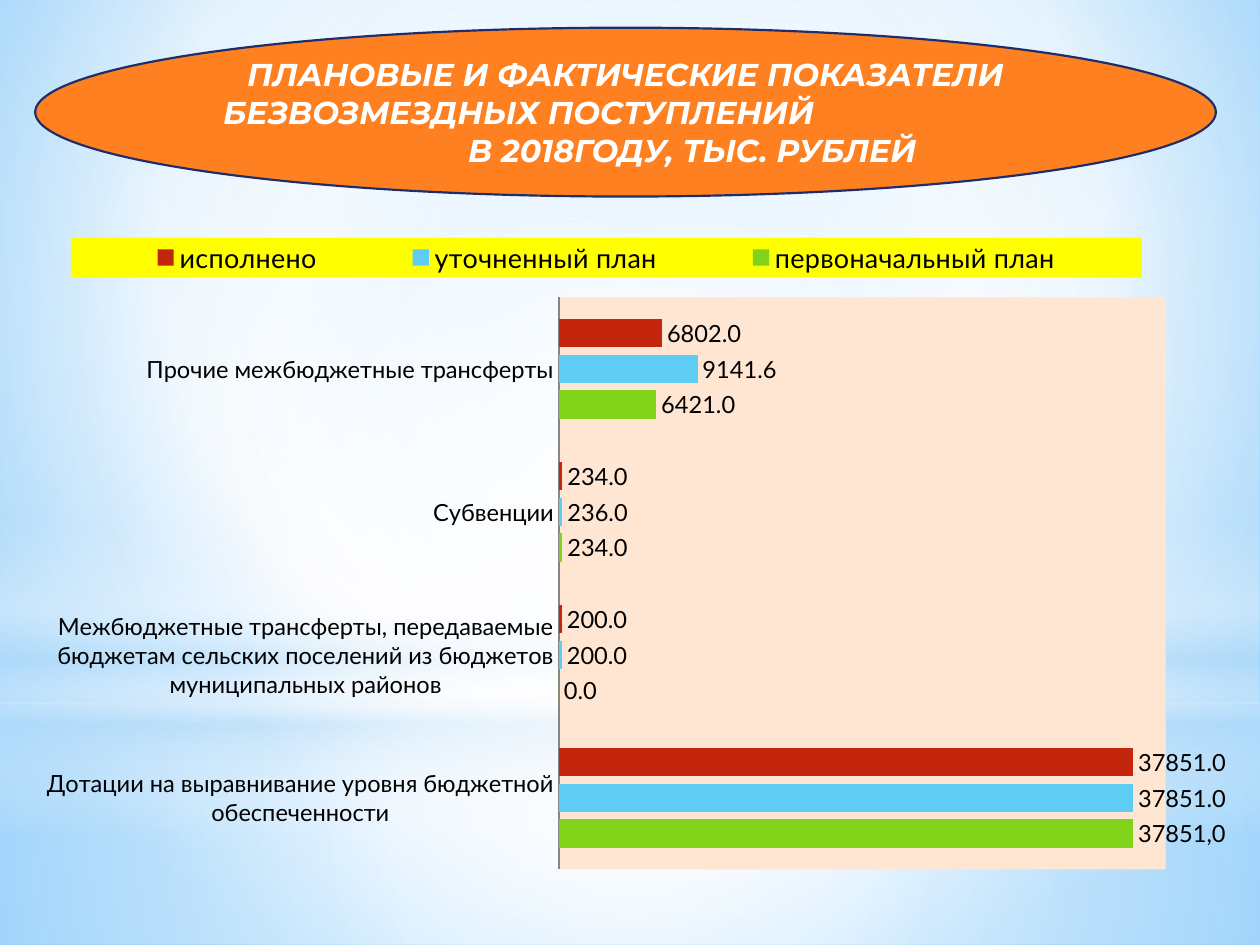
from pptx import Presentation
from pptx.chart.data import CategoryChartData
from pptx.dml.color import RGBColor
from pptx.enum.chart import XL_CHART_TYPE, XL_LABEL_POSITION, XL_LEGEND_POSITION, XL_TICK_LABEL_POSITION, XL_TICK_MARK
from pptx.enum.shapes import MSO_SHAPE
from pptx.enum.text import MSO_ANCHOR, PP_ALIGN
from pptx.oxml import parse_xml
from pptx.oxml.ns import nsdecls, qn
from pptx.util import Inches, Pt

RECTANGLE, OVAL = MSO_SHAPE.RECTANGLE, MSO_SHAPE.OVAL
LEFT, CENTER = PP_ALIGN.LEFT, PP_ALIGN.CENTER
MIDDLE_ANCHOR = MSO_ANCHOR.MIDDLE
BAR_CLUSTERED = XL_CHART_TYPE.BAR_CLUSTERED
LEGEND_TOP = XL_LEGEND_POSITION.TOP
NEXT_TO_AXIS = XL_TICK_LABEL_POSITION.NEXT_TO_AXIS
NO_TICK = XL_TICK_MARK.NONE
OUTSIDE_END = XL_LABEL_POSITION.OUTSIDE_END

WHITE = RGBColor(0xFF, 0xFF, 0xFF)
BLACK = RGBColor(0, 0, 0)
GRAY = RGBColor(0x86, 0x86, 0x86)
ORANGE = RGBColor(0xFF, 0x80, 0x21)
NAVY = RGBColor(0x1F, 0x2E, 0x69)
YELLOW = RGBColor(0xFF, 0xFF, 0x00)
PEACH = RGBColor(0xFF, 0xE6, 0xD3)
GREEN = RGBColor(0x81, 0xD3, 0x1A)
BLUE = RGBColor(0x5E, 0xCC, 0xF3)
RED = RGBColor(0xC3, 0x26, 0x0C)
SKY = RGBColor(0x9E, 0xD5, 0xFF)
DEEP_SKY = RGBColor(0x5B, 0xB9, 0xFF)
PALE_BLUE = RGBColor(0xB4, 0xDC, 0xFA)

CHART_FONT, TITLE_FONT = "Lato", "Montserrat"
LABEL_SIZE, LEGEND_SIZE, TITLE_SIZE = 13.5, 15.4, 18

TITLE_LINES = [
    ("ПЛАНОВЫЕ И ФАКТИЧЕСКИЕ ПОКАЗАТЕЛИ", CENTER, 0),
    ("БЕЗВОЗМЕЗДНЫХ ПОСТУПЛЕНИЙ", LEFT, 0.02),
    ("В 2018ГОДУ, ТЫС. РУБЛЕЙ", CENTER, 1.06),
]
CATEGORIES = [
    "Дотации на выравнивание уровня бюджетной обеспеченности",
    "Межбюджетные трансферты, передаваемые бюджетам сельских поселений из бюджетов муниципальных районов",
    "Субвенции",
    "Прочие межбюджетные трансферты",
]
SERIES = [
    ("первоначальный план", GREEN, (37851, 0, 234, 6421)),
    ("уточненный план", BLUE, (37851, 200, 236, 9141.6)),
    ("исполнено", RED, (37851, 200, 234, 6802)),
]
BACKGROUND_STOPS = [(0, SKY, 100), (60, WHITE, 100), (100, DEEP_SKY, 100)]
MIDDLE = (50, 50, 50, 50)
GLOWS = [
    (RECTANGLE, (0, 5.58, 10, 1.92), [(0, WHITE, 91), (37, WHITE, 76), (100, PALE_BLUE, 79)], MIDDLE),
    (RECTANGLE, (0, 0, 10, 5.58), [(0, WHITE, 89), (48, WHITE, 62), (100, PALE_BLUE, 79)], MIDDLE),
    (RECTANGLE, (0, 4.12, 10, 2.5), [(0, WHITE, 0), (29, WHITE, 30), (45, PALE_BLUE, 40),
                                     (55, WHITE, 26), (65, PALE_BLUE, 60), (100, WHITE, 0)], None),
    (OVAL, (0, 1.75, 10, 5.58), [(0, WHITE, 100), (56, WHITE, 0)], MIDDLE),
]


def gradient(stops, focus):
    stop_xml = "".join(
        f'<a:gs pos="{position * 1000}"><a:srgbClr val="{color}">'
        f'<a:alpha val="{alpha * 1000}"/></a:srgbClr></a:gs>'
        for position, color, alpha in stops)
    if focus:
        edges = " ".join(f'{side}="{value * 1000}"' for side, value in zip("ltrb", focus))
        direction = f'<a:path path="circle"><a:fillToRect {edges}/></a:path>'
    else:
        direction = '<a:lin ang="5400000" scaled="0"/>'
    return parse_xml(f'<a:gradFill {nsdecls("a")} rotWithShape="1"><a:gsLst>{stop_xml}</a:gsLst>{direction}</a:gradFill>')


def replace_solid_fill(properties, fill):
    properties.replace(properties.find(qn("a:solidFill")), fill)


def add_shape(slide, kind, box):
    shape = slide.shapes.add_shape(kind, *map(Inches, box))
    shape.shadow.inherit = False
    shape.fill.solid()
    return shape


def chart_layout(inner, *box):
    target = '<c:layoutTarget val="inner"/>' if inner else ""
    modes = "".join(f'<c:{side}Mode val="edge"/>' for side in "xy")
    sizes = "".join(f'<c:{side} val="{value}"/>' for side, value in zip("xywh", box))
    return parse_xml(f'<c:layout {nsdecls("c")}><c:manualLayout>{target}{modes}{sizes}</c:manualLayout></c:layout>')


def chart_fill(color):
    return parse_xml(f'<c:spPr {nsdecls("c", "a")}><a:solidFill><a:srgbClr val="{color}"/></a:solidFill></c:spPr>')


def chart_part(chart, tag):
    part = chart.element.find(".//" + qn(tag))
    for layout in part.findall(qn("c:layout")):
        part.remove(layout)
    return part


def set_font(font, size, color, name):
    font.size, font.name = Pt(size), name
    font.color.rgb = color


def add_background(slide):
    slide.background.fill.solid()
    properties = slide.element.find(".//" + qn("p:bgPr"))
    replace_solid_fill(properties, gradient(BACKGROUND_STOPS, (20, 10, 20, 60)))
    for kind, box, stops, focus in GLOWS:
        shape = add_shape(slide, kind, box)
        shape.line.fill.background()
        replace_solid_fill(shape.element.spPr, gradient(stops, focus))


def add_chart(slide):
    data = CategoryChartData(number_format="0.0")
    data.categories = CATEGORIES
    for name, _, values in SERIES:
        data.add_series(name, values)
    box = map(Inches, (0.28, 1.78, 9.45, 5.28))
    chart = slide.shapes.add_chart(BAR_CLUSTERED, *box, data).chart
    chart.has_title = False
    set_font(chart.font, LABEL_SIZE, BLACK, CHART_FONT)

    category_axis, value_axis = chart.category_axis, chart.value_axis
    category_axis.major_tick_mark = NO_TICK
    category_axis.tick_label_position = NEXT_TO_AXIS
    category_axis.format.line.color.rgb = GRAY
    value_axis.has_major_gridlines = False
    value_axis.minimum_scale, value_axis.maximum_scale = 0, 40000
    value_axis.visible = False

    plot = chart.plots[0]
    plot.gap_width, plot.overlap = 150, -25
    plot.vary_by_categories = False
    for series, (_, color, _) in zip(plot.series, SERIES):
        series.format.fill.solid()
        series.format.fill.fore_color.rgb = color
        labels = series.data_labels
        labels.show_value = True
        labels.number_format, labels.number_format_is_linked = "0.0", False
        labels.position = OUTSIDE_END
    label = plot.series[0].points[0].data_label
    label.text_frame.text = "37851,0"
    set_font(label.text_frame.paragraphs[0].runs[0].font, LABEL_SIZE, BLACK, CHART_FONT)
    label.position = OUTSIDE_END

    chart.has_legend = True
    legend = chart.legend
    legend.position = LEGEND_TOP
    legend.include_in_layout = False
    set_font(legend.font, LEGEND_SIZE, BLACK, CHART_FONT)
    legend_part = chart_part(chart, "c:legend")
    legend_part.find(qn("c:legendPos")).addnext(chart_layout(False, 0.03, 0.02, 0.9, 0.06))
    legend_part.find(qn("c:overlay")).addnext(chart_fill(YELLOW))

    plot_area = chart_part(chart, "c:plotArea")
    plot_area.insert(0, chart_layout(True, 0.44, 0.11, 0.51, 0.86))
    plot_area.append(chart_fill(PEACH))


def add_title(slide):
    shape = add_shape(slide, OVAL, (0.28, 0.22, 9.37, 1.34))
    shape.fill.fore_color.rgb = ORANGE
    shape.line.color.rgb = NAVY
    shape.line.width = Pt(1.25)
    frame = shape.text_frame
    frame.word_wrap = True
    frame.vertical_anchor = MIDDLE_ANCHOR
    frame.text = "\n".join(text for text, _, _ in TITLE_LINES)
    for paragraph, (_, alignment, indent) in zip(frame.paragraphs, TITLE_LINES):
        paragraph.alignment = alignment
        paragraph._p.get_or_add_pPr().set("marL", str(Inches(indent)))
        font = paragraph.runs[0].font
        set_font(font, TITLE_SIZE, WHITE, TITLE_FONT)
        font.bold = font.italic = True


def main():
    presentation = Presentation()
    presentation.slide_width, presentation.slide_height = Inches(10), Inches(7.5)
    slide = presentation.slides.add_slide(presentation.slide_layouts[6])
    add_background(slide)
    add_chart(slide)
    add_title(slide)
    presentation.save("out.pptx")


if __name__ == "__main__":
    main()
